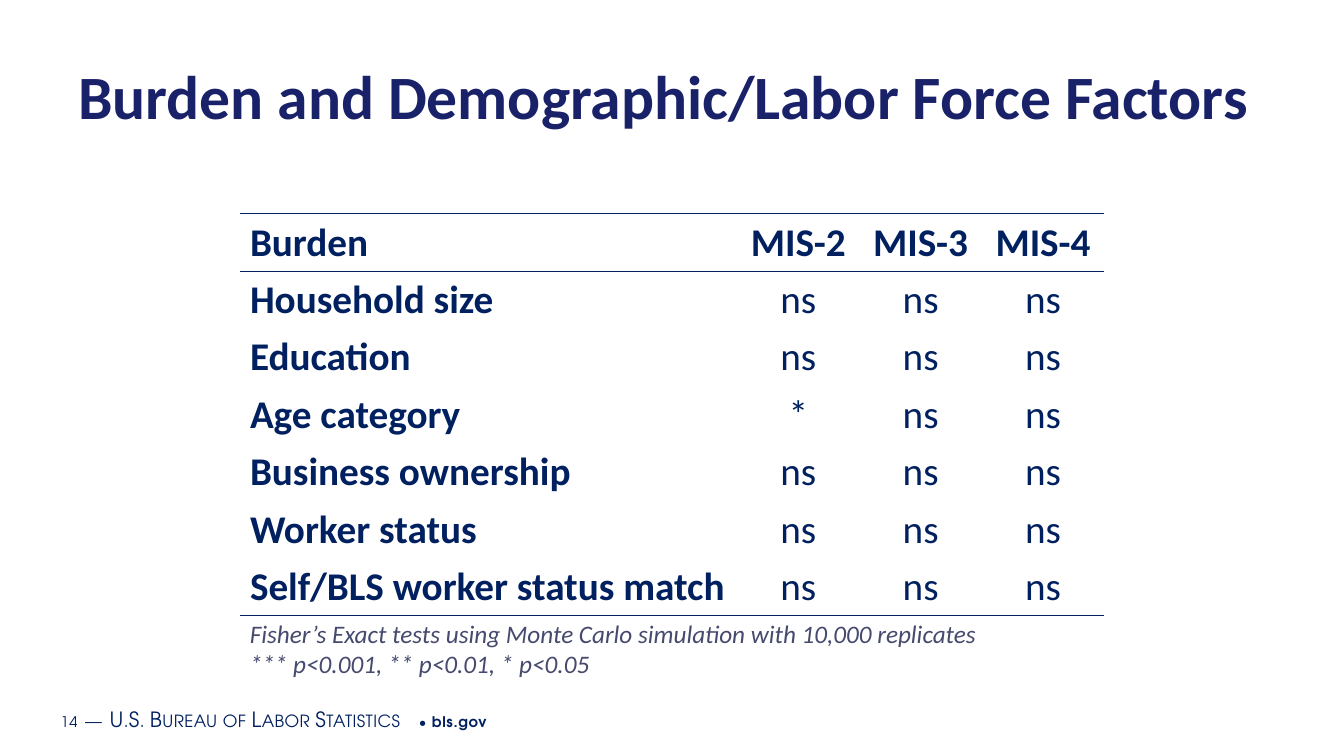
import pptx
import pptx.dml.color
import pptx.enum.text
import pptx.oxml
import pptx.oxml.ns
import pptx.util
from dataclasses import dataclass

ALIGN = pptx.enum.text.PP_ALIGN
ANCHOR = pptx.enum.text.MSO_ANCHOR


@dataclass(frozen=True)
class Theme:
    navy: str = "002060"
    title_ink: str = "192168"
    note_ink: str = "464A6E"
    body_font: str = "Calibri"
    footer_font: str = "TeX Gyre Adventor"
    title_size: float = 44
    table_size: float = 28
    note_size: float = 18
    agency_size: float = 15
    gap_size: float = 16
    footer_size: float = 10.5


theme = Theme()
deck = pptx.Presentation()
deck.slide_width = pptx.util.Inches(13.33)
deck.slide_height = pptx.util.Inches(7.5)
slide = deck.slides.add_slide(deck.slide_layouts[6])

# The slide is a grid of 100 columns by 100 rows
column = deck.slide_width / 100
row = deck.slide_height / 100


def add_text(left, top, width, height, text, anchor=ANCHOR.TOP):
    """Add a wrapping text box placed in grid units and return its frame."""
    frame = slide.shapes.add_textbox(
        int(left * column), int(top * row), int(width * column), int(height * row)
    ).text_frame
    frame.word_wrap = True
    frame.vertical_anchor = anchor
    frame.text = text
    return frame


def style(font, size, color, name=theme.body_font, bold=False, italic=False):
    font.size = pptx.util.Pt(size)
    font.color.rgb = pptx.dml.color.RGBColor.from_string(color)
    font.name = name
    font.bold = bold
    font.italic = italic


# Title
title = add_text(3.45, 6.67, 91.9, 11.73,
                 "Burden and Demographic/Labor Force Factors", ANCHOR.MIDDLE)
title.paragraphs[0].alignment = ALIGN.CENTER
style(title.paragraphs[0].runs[0].font, theme.title_size, theme.title_ink, bold=True)

# Table of test results
results = [
    ("Burden", "MIS-2", "MIS-3", "MIS-4"),
    ("Household size", "ns", "ns", "ns"),
    ("Education", "ns", "ns", "ns"),
    ("Age category", "*", "ns", "ns"),
    ("Business ownership", "ns", "ns", "ns"),
    ("Worker status", "ns", "ns", "ns"),
    ("Self/BLS worker status match", "ns", "ns", "ns"),
]
table_left, table_top, row_height = 17.85, 28.27, 7.6
column_widths = [37, 9.1, 9.1, 9.1]
ruled_edges = {0, 1, len(results)}

table = slide.shapes.add_table(
    len(results), len(column_widths),
    int(table_left * column), int(table_top * row),
    int(sum(column_widths) * column), int(len(results) * row_height * row),
).table
table.first_row = False
table.horz_banding = False
for table_column, width in zip(table.columns, column_widths):
    table_column.width = int(width * column)

for r, values in enumerate(results):
    table.rows[r].height = int(row_height * row)
    for c, value in enumerate(values):
        cell = table.cell(r, c)
        cell.text = value
        cell.fill.background()
        paragraph = cell.text_frame.paragraphs[0]
        paragraph.alignment = ALIGN.LEFT if c == 0 else ALIGN.CENTER
        style(paragraph.runs[0].font, theme.table_size, theme.navy,
              bold=r == 0 or c == 0)
        borders = [("lnL", False), ("lnR", False),
                   ("lnT", r in ruled_edges), ("lnB", r + 1 in ruled_edges)]
        for position, (side, ruled) in enumerate(borders):
            paint = (f'<a:solidFill><a:srgbClr val="{theme.navy}"/></a:solidFill>'
                     if ruled else "<a:noFill/>")
            cell._tc.get_or_add_tcPr().insert(position, pptx.oxml.parse_xml(
                f'<a:{side} {pptx.oxml.ns.nsdecls("a")} w="12700">{paint}</a:{side}>'))

# Note below the table
note = add_text(table_left, 81.1, 57, 9,
                "Fisher’s Exact tests using Monte Carlo simulation with 10,000 replicates\n"
                "*** p<0.001, ** p<0.01, * p<0.05")
for paragraph in note.paragraphs:
    style(paragraph.runs[0].font, theme.note_size, theme.note_ink, italic=True)

# Footer: text, size, letter spacing in hundredths of a point, small caps, bold
footer_parts = [
    ("14", theme.footer_size, 50, False, False),
    (" ", theme.gap_size, 50, False, False),
    ("—", theme.agency_size, 30, True, False),
    (" ", theme.gap_size, 50, False, False),
    ("U.S. Bureau of Labor Statistics", theme.agency_size, 30, True, False),
    (" • ", theme.footer_size, 50, False, False),
    ("bls.gov", theme.footer_size, 50, False, True),
]
footer = add_text(3.98, 92.4, 63.5, 5.33, "", ANCHOR.MIDDLE)
footer.margin_left = footer.margin_right = pptx.util.Inches(0.07)
footer.margin_top = footer.margin_bottom = pptx.util.Inches(0.04)
for text, size, spacing, small_caps, bold in footer_parts:
    run = footer.paragraphs[0].add_run()
    run.text = text
    style(run.font, size, theme.navy, theme.footer_font, bold)
    properties = run._r.get_or_add_rPr()
    properties.set("spc", str(spacing))
    if small_caps:
        properties.set("cap", "small")

deck.save("out.pptx")
